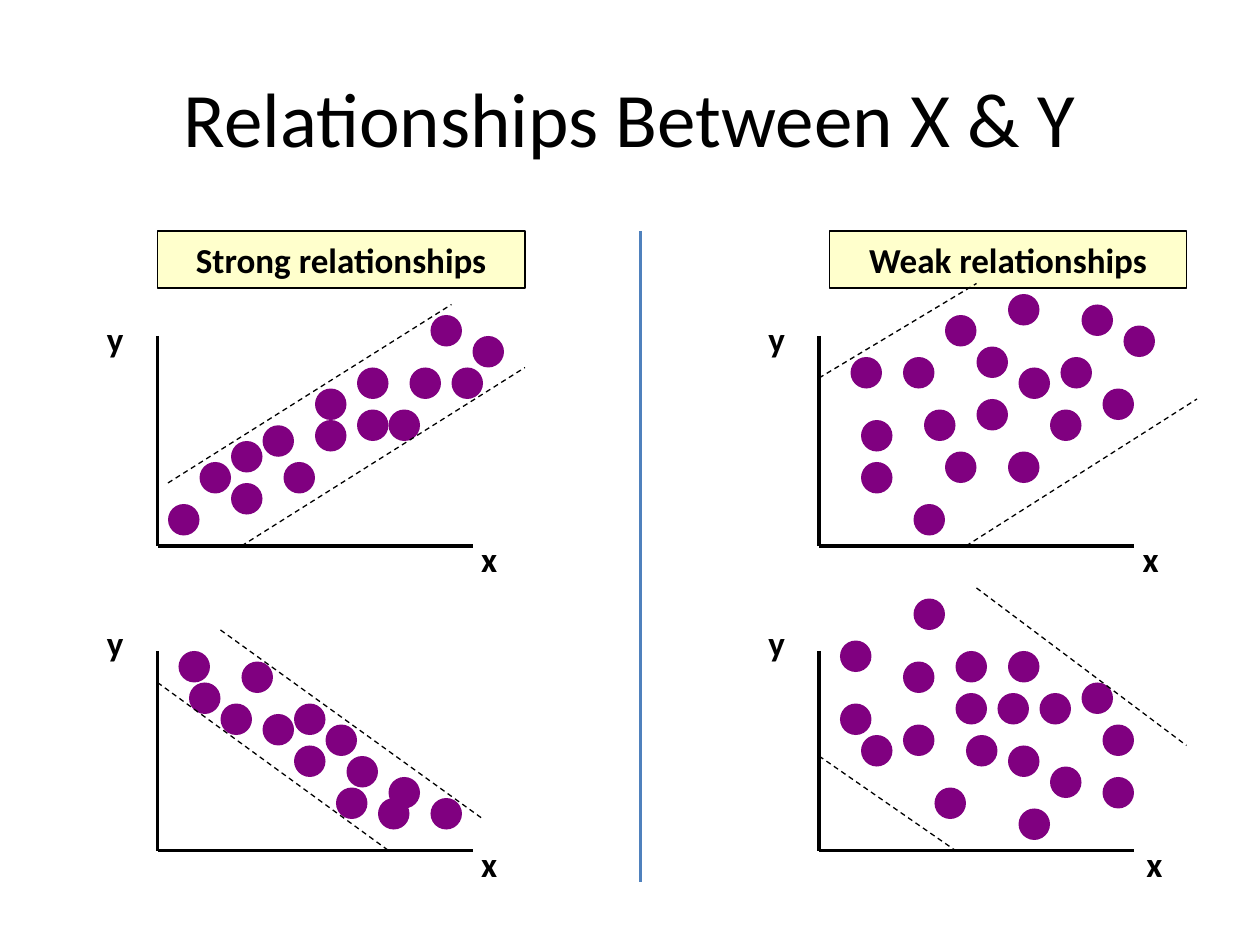
from dataclasses import dataclass

from lxml.etree import SubElement
from pptx import Presentation
from pptx.dml.color import RGBColor
from pptx.enum.dml import MSO_LINE_DASH_STYLE as Dash
from pptx.enum.shapes import MSO_CONNECTOR as Connector, MSO_SHAPE as Shape
from pptx.enum.text import MSO_ANCHOR as Anchor, MSO_AUTO_SIZE as AutoSize, PP_ALIGN as Align
from pptx.oxml.ns import qn
from pptx.util import Cm, Pt

COLORS = {"ink": "000000", "dot": "800080", "heading": "FFFFCC", "divider": "4F81BD"}
FONT = "Calibri"
DOT_SIZE = 3
X_AXIS_LENGTH = 30


@dataclass
class Plot:
    """Dots and trend bands are (right, up) grid steps from the axis corner."""
    corner: tuple
    y_axis_length: int
    dots: list
    bands: list
    x_label_offset: float = 29.64


PLOTS = [
    Plot((15, 52), 20,
         [(1, 1), (4, 5), (26, 19), (28, 14), (7, 3), (30, 17), (19, 10), (19, 14),
          (24, 14), (15, 12), (7, 7), (10, 8.5), (22, 10), (15, 9), (12, 5)],
         [((1, 6), (28, 23)), ((8, 0), (35, 17))]),
    Plot((15, 81), 19,
         [(21, 2), (3, 13), (26, 2), (8, 15), (18, 6), (22, 4), (13, 11), (2, 16),
          (6, 11), (10, 10), (17, 3), (16, 9), (13, 7)],
         [((6, 21), (31, 3)), ((0, 16), (22, 0))]),
    Plot((78, 52), 20,
         [(15, 16), (4, 5), (18, 6), (23, 15), (8, 15), (9, 1), (12, 6), (19, 14),
          (12, 19), (4, 9), (3, 15), (10, 10), (22, 10), (15, 11), (18, 21),
          (29, 18), (27, 12), (25, 20)],
         [((0, 16), (15, 25)), ((14, 0), (36, 14))]),
    Plot((78, 81), 19,
         [(2, 11), (2, 17), (8, 9), (19, 1), (4, 8), (13, 16), (18, 7), (17, 12),
          (13, 12), (8, 15), (21, 12), (14, 8), (11, 3), (22, 5), (27, 9),
          (25, 13), (27, 4), (18, 16), (9, 21)],
         [((15, 25), (35, 10)), ((0, 9), (13, 0))], x_label_offset=30),
]


def grid(steps):
    """Length of a number of grid steps, twelve to 2.54 cm."""
    return Cm(2.54 * steps / 12)


def rgb(name):
    return RGBColor.from_string(COLORS[name])


def style_text(frame, size, bold=False, align=None):
    for paragraph in frame.paragraphs:
        paragraph.alignment = align
        for run in paragraph.runs:
            run.font.name = FONT
            run.font.size = Pt(size)
            run.font.bold = bold
            run.font.color.rgb = rgb("ink")


def add_title(slide, text):
    title = slide.shapes.title
    title.left, title.top, title.width, title.height = map(grid, (6, 3.6, 108, 15))
    title.text_frame.text = text
    title.text_frame.vertical_anchor = Anchor.MIDDLE
    style_text(title.text_frame, 44, align=Align.CENTER)


def add_line(slide, start, end, width, color="ink", dash=None):
    line = slide.shapes.add_connector(Connector.STRAIGHT, *map(grid, start + end))
    line.line.color.rgb = rgb(color)
    line.line.width = Pt(width)
    if dash:
        line.line.dash_style = dash
    SubElement(line._element.spPr, qn("a:effectLst"))


def add_heading(slide, left, width, text):
    box = slide.shapes.add_shape(Shape.RECTANGLE, *map(grid, (left, 22, width, 5.4)))
    box.shadow.inherit = False
    box.fill.solid()
    box.fill.fore_color.rgb = rgb("heading")
    box.line.color.rgb = rgb("ink")
    box.line.width = Pt(1)
    box.text_frame.text = text
    style_text(box.text_frame, 20, bold=True, align=Align.CENTER)


def add_axis_label(slide, left, top, text):
    label = slide.shapes.add_textbox(*map(grid, (left, top, 4.3, 5.2)))
    label.text_frame.word_wrap = False
    label.text_frame.auto_size = AutoSize.SHAPE_TO_FIT_TEXT
    label.text_frame.text = text
    style_text(label.text_frame, 20, bold=True)


def add_dot(slide, left, top):
    dot = slide.shapes.add_shape(Shape.OVAL, *map(grid, (left, top, DOT_SIZE, DOT_SIZE)))
    dot.shadow.inherit = False
    dot.fill.solid()
    dot.fill.fore_color.rgb = rgb("dot")
    dot.line.fill.background()


def add_plot(slide, plot):
    corner_x, corner_y = plot.corner

    def place(right, up):
        return corner_x + right, corner_y - up

    add_line(slide, place(0, plot.y_axis_length), plot.corner, 2)
    add_line(slide, plot.corner, place(X_AXIS_LENGTH, 0), 2)
    add_axis_label(slide, *place(-6, 22.4), "y")
    add_axis_label(slide, *place(plot.x_label_offset, 1.4), "x")
    for right, up in plot.dots:
        add_dot(slide, *place(right, up + DOT_SIZE))
    for start, end in plot.bands:
        add_line(slide, place(*start), place(*end), 0.75, dash=Dash.DASH)


def main():
    deck = Presentation()
    deck.slide_width, deck.slide_height = Cm(25.4), Cm(19.05)
    slide = deck.slides.add_slide(deck.slide_layouts[5])
    add_title(slide, "Relationships Between X & Y")
    add_heading(slide, 15, 35, "Strong relationships")
    add_heading(slide, 79, 34, "Weak relationships")
    add_line(slide, (61, 22), (61, 84), 2.25, "divider")
    for plot in PLOTS:
        add_plot(slide, plot)
    deck.save("out.pptx")


if __name__ == "__main__":
    main()
